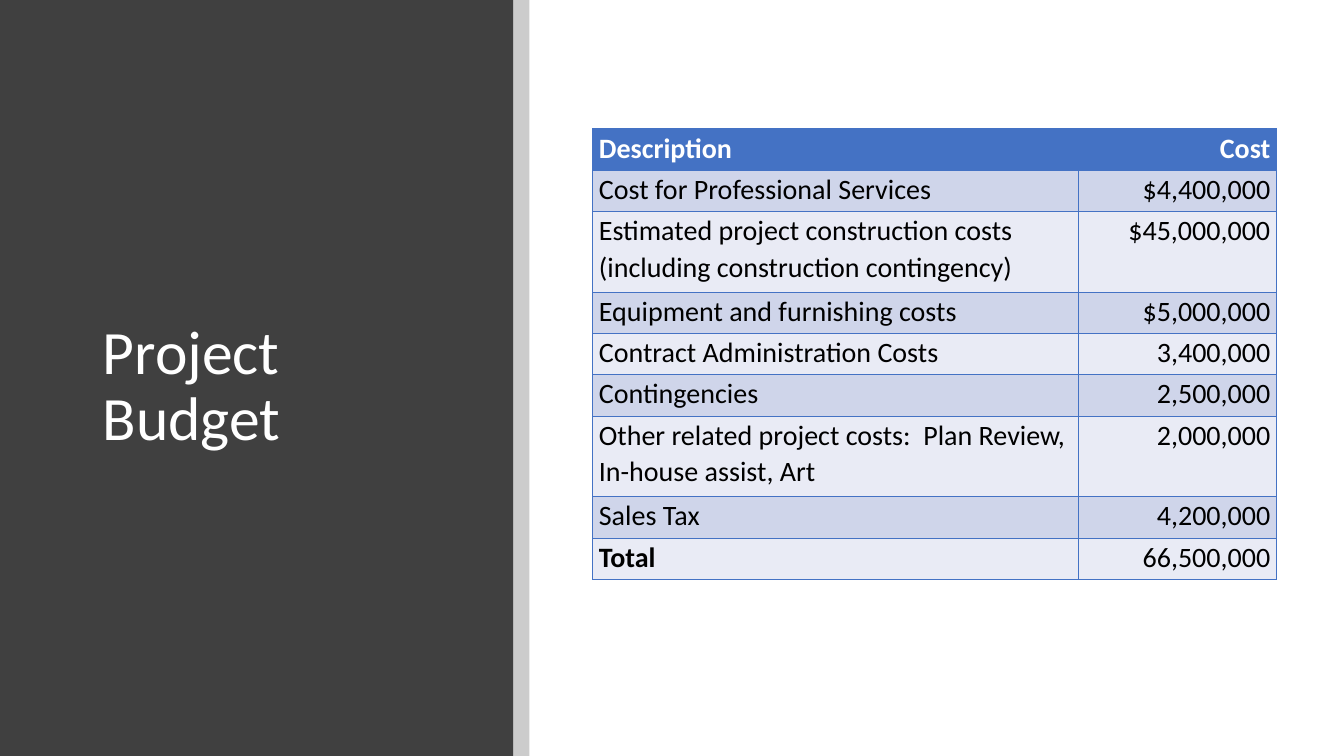
from lxml import etree
from pptx import Presentation
from pptx import util as u
from pptx.dml import color
from pptx.enum import shapes, text
from pptx.oxml import ns

WIDTH, HEIGHT = 13.33, 7.5
FONT = "Calibri"
COLORS = {
    "panel": "404040",
    "black": "000000",
    "white": "FFFFFF",
    "accent": "4472C4",
    "band_dark": "CFD5EA",
    "band_light": "E9EBF5",
}
TITLE_BOX = (0.92, 0.89, 3.65, 5.91)
PANEL_BOX = (0, 0, 5.09, HEIGHT)
STRIPE_BOX = (5.09, 0, 0.16, HEIGHT)
TABLE_BOX = (5.88, 1.28, 6.78, 4.47)
COST_SHARE = 0.29
ROW_HEIGHT, TALL_ROW_HEIGHT = 0.41, 0.8
TALL_ROWS = (2, 6)
BUDGET = [
    ("Description", "Cost"),
    ("Cost for Professional Services", "$4,400,000"),
    ("Estimated project construction costs (including construction contingency)",
     "$45,000,000"),
    ("Equipment and furnishing costs", "$5,000,000"),
    ("Contract Administration Costs", "3,400,000"),
    ("Contingencies", "2,500,000"),
    ("Other related project costs:  Plan Review, In-house assist, Art", "2,000,000"),
    ("Sales Tax", "4,200,000"),
    ("Total", "66,500,000"),
]


def rgb(name):
    return color.RGBColor.from_string(COLORS[name])


def inches(box):
    return [u.Inches(length) for length in box]


def set_all(target, values):
    for name, value in values.items():
        setattr(target, name, value)


def write(frame, words, size, ink, bold=False, **para_format):
    para = frame.paragraphs[0]
    set_all(para, para_format)
    span = para.add_run()
    span.text = words
    set_all(span.font, {"name": FONT, "size": u.Pt(size), "bold": bold})
    span.font.color.rgb = rgb(ink)


def add_block(page, box, fill, alpha=None):
    """Add a plain rectangle; alpha is its opacity in percent."""
    block = page.shapes.add_shape(shapes.MSO_SHAPE.RECTANGLE, *inches(box))
    block.shadow.inherit = False
    block.line.fill.background()
    block.fill.solid()
    block.fill.fore_color.rgb = rgb(fill)
    if alpha is not None:
        tint = block.element.spPr.find(".//" + ns.qn("a:srgbClr"))
        etree.SubElement(tint, ns.qn("a:alpha"), val=str(alpha * 1000))


def add_title_panel(page):
    add_block(page, PANEL_BOX, "panel")
    title = page.shapes.title
    title.element.getparent().append(title.element)
    set_all(title, dict(zip(("left", "top", "width", "height"), inches(TITLE_BOX))))
    set_all(title.text_frame, {"word_wrap": True,
                               "auto_size": text.MSO_AUTO_SIZE.NONE,
                               "vertical_anchor": text.MSO_ANCHOR.MIDDLE})
    write(title.text_frame, "Project Budget", 44, "white",
          alignment=text.PP_ALIGN.LEFT, line_spacing=0.9)
    add_block(page, STRIPE_BOX, "black", alpha=20)


def add_borders(cell):
    properties = cell._tc.get_or_add_tcPr()
    for position, side in enumerate(("a:lnL", "a:lnR", "a:lnT", "a:lnB")):
        line = etree.Element(ns.qn(side), w=str(u.Pt(1)))
        fill = etree.SubElement(line, ns.qn("a:solidFill"))
        etree.SubElement(fill, ns.qn("a:srgbClr"), val=COLORS["accent"])
        properties.insert(position, line)


def format_cell(cell, words, row, column):
    header = row == 0
    bold = header or words == "Total"
    fill = "accent" if header else "band_dark" if row % 2 else "band_light"
    set_all(cell, {"margin_left": u.Inches(0.06), "margin_right": u.Inches(0.06),
                   "margin_top": 0, "margin_bottom": 0})
    cell.fill.solid()
    cell.fill.fore_color.rgb = rgb(fill)
    align = text.PP_ALIGN.RIGHT if column else text.PP_ALIGN.LEFT
    write(cell.text_frame, words, 20, "white" if header else "black", bold,
          alignment=align, line_spacing=1.07)
    add_borders(cell)


def add_budget_table(page, box):
    table = page.shapes.add_table(len(BUDGET), 2, *inches(box)).table
    for column, share in zip(table.columns, (1 - COST_SHARE, COST_SHARE)):
        column.width = u.Inches(box[2] * share)
    for row, entries in enumerate(BUDGET):
        height = TALL_ROW_HEIGHT if row in TALL_ROWS else ROW_HEIGHT
        table.rows[row].height = u.Inches(height)
        for column, words in enumerate(entries):
            format_cell(table.cell(row, column), words, row, column)


def main():
    deck = Presentation()
    set_all(deck, {"slide_width": u.Inches(WIDTH), "slide_height": u.Inches(HEIGHT)})
    page = deck.slides.add_slide(deck.slide_layouts.get_by_name("Title Only"))
    add_title_panel(page)
    add_budget_table(page, TABLE_BOX)
    deck.save("out.pptx")


if __name__ == "__main__":
    main()
